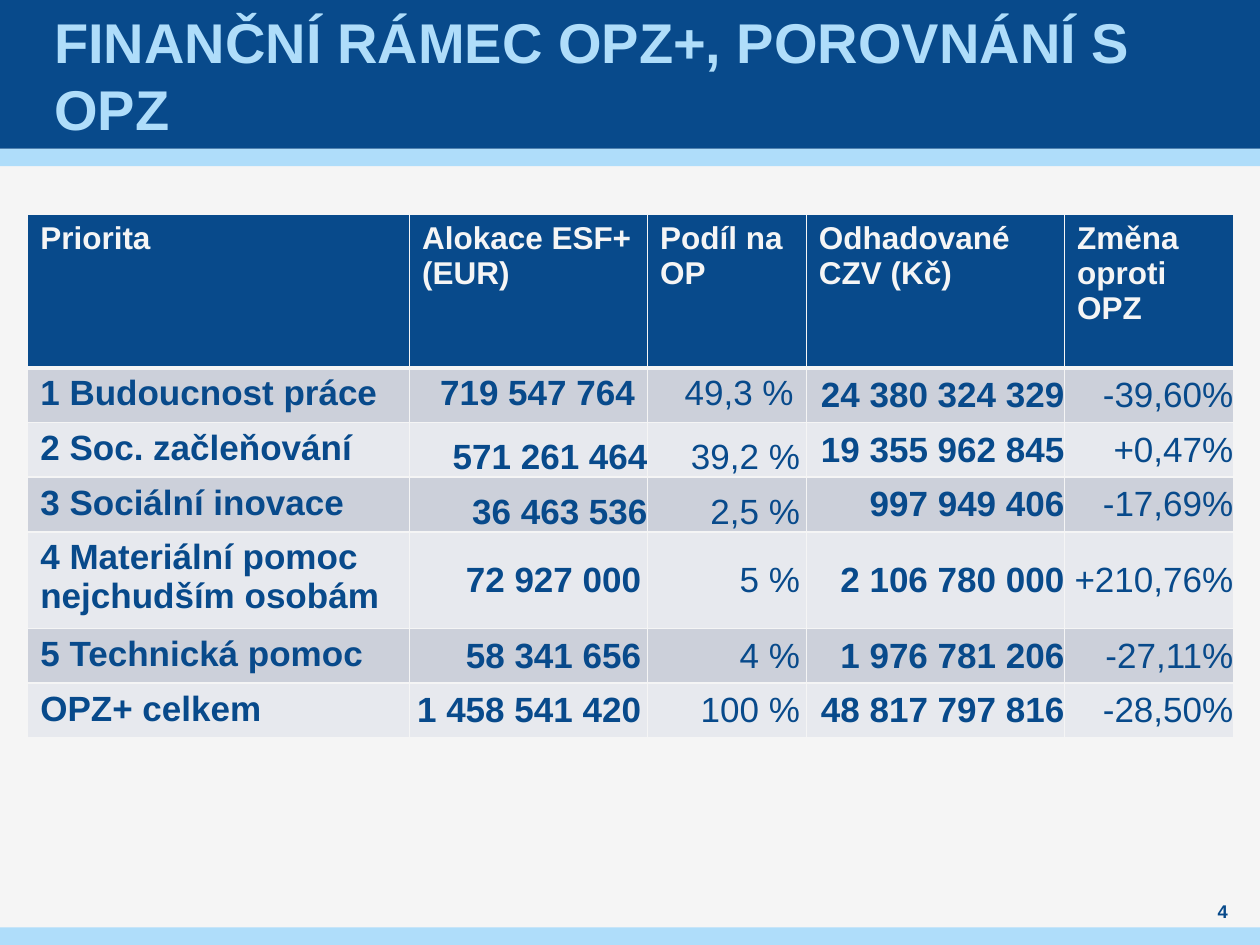
from dataclasses import dataclass

from lxml import etree
from pptx import Presentation
from pptx.dml.color import RGBColor
from pptx.enum.shapes import MSO_SHAPE
from pptx.enum.text import MSO_ANCHOR, PP_ALIGN
from pptx.oxml.ns import qn
from pptx.util import Inches, Pt

RECT = MSO_SHAPE.RECTANGLE
TOP, MID, LOW = MSO_ANCHOR.TOP, MSO_ANCHOR.MIDDLE, MSO_ANCHOR.BOTTOM
LEFT, CENTER, RIGHT = PP_ALIGN.LEFT, PP_ALIGN.CENTER, PP_ALIGN.RIGHT


@dataclass(frozen=True)
class Theme:
    font: str = "Arial"
    navy: str = "084A8B"
    sky: str = "AFDDFA"
    paper: str = "F5F5F5"
    bands: tuple = ("CCD0DA", "E7E9EE")
    title: float = 32
    head: float = 18
    body: float = 20
    page: float = 10.5
    thin: float = 1
    thick: float = 3


THEME = Theme()

WIDTHS = (3.03, 1.89, 1.26, 2.05, 1.34)
HEIGHTS = (1.22, 0.41, 0.41, 0.41, 0.72, 0.41, 0.41)
BOLD = (True, True, False, True, False)
HEADS = ("Priorita", "Alokace ESF+ (EUR)", "Podíl na OP",
         "Odhadované CZV (Kč)", "Změna oproti OPZ")
ROWS = (
    ("1 Budoucnost práce", "719 547 764", "49,3 %", "24 380 324 329", "-39,60%"),
    ("2 Soc. začleňování", "571 261 464", "39,2 %", "19 355 962 845", "+0,47%"),
    ("3 Sociální inovace", "36 463 536", "2,5 %", "997 949 406", "-17,69%"),
    ("4 Materiální pomoc nejchudším osobám", "72 927 000", "5 %",
     "2 106 780 000", "+210,76%"),
    ("5 Technická pomoc", "58 341 656", "4 %", "1 976 781 206", "-27,11%"),
    ("OPZ+ celkem", "1 458 541 420", "100 %", "48 817 797 816", "-28,50%"),
)


def paint(fill, color):
    fill.solid()
    fill.fore_color.rgb = RGBColor.from_string(color)


def write(frame, text, size, color, bold=True, align=LEFT, gap=0):
    frame.text = text
    para = frame.paragraphs[0]
    para.alignment = align
    para.space_before = para.space_after = Pt(gap)
    font = para.runs[0].font
    font.name, font.size, font.bold = THEME.font, Pt(size), bold
    font.color.rgb = RGBColor.from_string(color)


def inset(box, side, end):
    box.margin_left = box.margin_right = Inches(side)
    box.margin_top = box.margin_bottom = Inches(end)


def add_band(slide, top, height, color):
    band = slide.shapes.add_shape(RECT, 0, Inches(top), Inches(10), Inches(height))
    band.shadow.inherit = False
    paint(band.fill, color)
    band.line.fill.background()


def add_label(slide, box, text, size, color, align=LEFT, side=0):
    frame = slide.shapes.add_textbox(*map(Inches, box)).text_frame
    frame.word_wrap = True
    frame.vertical_anchor = MID
    inset(frame, side, 0)
    write(frame, text, size, color, align=align)


def edge(cell, top, bottom):
    """Draw the four borders; top and bottom are widths in points."""
    props = cell._tc.get_or_add_tcPr()
    widths = (("L", THEME.thin), ("R", THEME.thin), ("T", top), ("B", bottom))
    for side, width in widths:
        line = etree.SubElement(props, qn(f"a:ln{side}"), w=str(Pt(width)))
        fill = etree.SubElement(line, qn("a:solidFill"))
        etree.SubElement(fill, qn("a:srgbClr"), val=THEME.paper)


def layout(row, col):
    """Give anchor, side inset, end inset and paragraph gap of a body cell."""
    if col >= 3:
        return MID, 0, 0, 0
    if col == 0 or row == 1:
        return TOP, 0.1, 0.05, 0 if row == 1 else 6
    if row <= 3:
        return LOW, 0 if col == 1 else 0.05, 0, 6
    return MID, 0.05, 0, 6


def fill_head(cell, text):
    edge(cell, THEME.thin, THEME.thick)
    paint(cell.fill, THEME.navy)
    inset(cell, 0.1, 0.05)
    write(cell.text_frame, text, THEME.head, THEME.paper)


def fill_body(cell, text, row, col):
    edge(cell, THEME.thick if row == 1 else THEME.thin, THEME.thin)
    paint(cell.fill, THEME.bands[(row - 1) % 2])
    anchor, side, end, gap = layout(row, col)
    cell.vertical_anchor = anchor
    inset(cell, side, end)
    align = RIGHT if col else LEFT
    write(cell.text_frame, text, THEME.body, THEME.navy, BOLD[col], align, gap)


def add_budget(slide):
    box = map(Inches, (0.22, 1.7, sum(WIDTHS), sum(HEIGHTS)))
    table = slide.shapes.add_table(len(HEIGHTS), len(WIDTHS), *box).table
    for column, width in zip(table.columns, WIDTHS):
        column.width = Inches(width)
    for line, height in zip(table.rows, HEIGHTS):
        line.height = Inches(height)
    for col, text in enumerate(HEADS):
        fill_head(table.cell(0, col), text)
    for row, texts in enumerate(ROWS, 1):
        for col, text in enumerate(texts):
            fill_body(table.cell(row, col), text, row, col)


def main():
    deck = Presentation()
    deck.slide_width, deck.slide_height = Inches(10), Inches(7.5)
    slide = deck.slides.add_slide(deck.slide_layouts[6])
    paint(slide.background.fill, THEME.paper)
    add_band(slide, 1.18, 0.14, THEME.sky)
    add_band(slide, 0, 1.18, THEME.navy)
    add_band(slide, 7.36, 0.14, THEME.sky)
    add_label(slide, (0.39, 0, 9.21, 1.18), "FINANČNÍ RÁMEC OPZ+, POROVNÁNÍ S OPZ",
              THEME.title, THEME.sky, side=0.04)
    add_budget(slide)
    add_label(slide, (9.45, 7.13, 0.51, 0.2), "4", THEME.page, THEME.navy, CENTER)
    deck.save("out.pptx")


if __name__ == "__main__":
    main()
